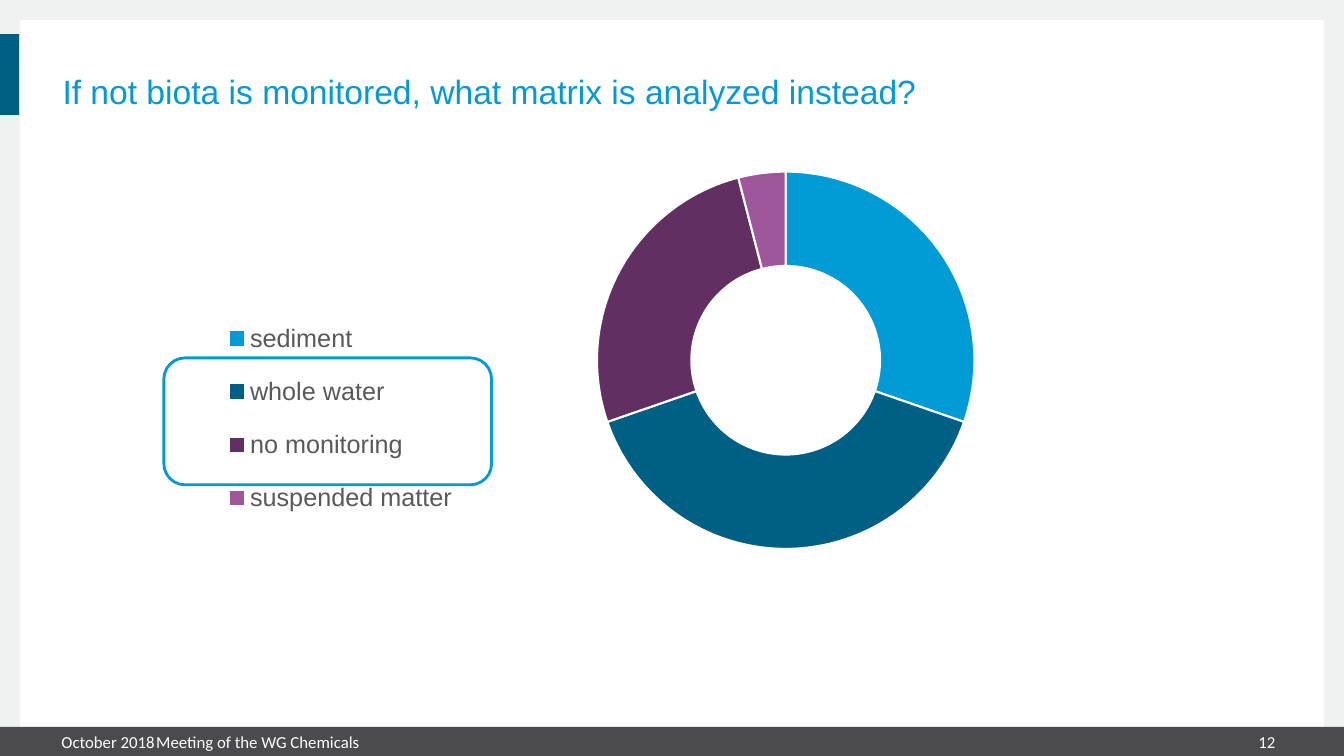
import pptx
import pptx.chart.data
import pptx.dml.color
import pptx.enum.chart
import pptx.enum.shapes
import pptx.enum.text
import pptx.oxml
import pptx.oxml.ns
import pptx.util

WIDTH, HEIGHT = 13.33, 7.5
SKY, PETROL, PLUM, ORCHID = "009BD5", "005F85", "622F63", "9D579A"
WHITE, PALE, CHARCOAL, GREY = "FFFFFF", "F0F1F1", "4B4B4D", "595959"
SHAPES = pptx.enum.shapes.MSO_SHAPE
ANCHOR = pptx.enum.text.MSO_ANCHOR
ALIGN = pptx.enum.text.PP_ALIGN
MATRICES = {
    "sediment": (30, SKY),
    "whole water": (39, PETROL),
    "no monitoring": (26, PLUM),
    "suspended matter": (4, ORCHID),
}


def color(hex_value):
    return pptx.dml.color.RGBColor.from_string(hex_value)


def inches(box):
    return [pptx.util.Inches(length) for length in box]


def set_font(font, name, size, hex_value):
    for key, value in {"name": name, "size": pptx.util.Pt(size), "bold": False}.items():
        setattr(font, key, value)
    font.color.rgb = color(hex_value)


def write(holder, text, font, anchor, align=ALIGN.LEFT):
    frame = holder.text_frame
    settings = {"margin_left": 0, "margin_top": 0, "margin_right": 0, "margin_bottom": 0,
                "word_wrap": True, "vertical_anchor": anchor,
                "auto_size": pptx.enum.text.MSO_AUTO_SIZE.NONE}
    for key, value in settings.items():
        setattr(frame, key, value)
    line = frame.paragraphs[0]
    line.alignment = align
    run = line.add_run()
    run.text = text
    set_font(run.font, *font)
    return line


def add_block(slide, box, fill=None, outline=None, kind=SHAPES.RECTANGLE):
    block = slide.shapes.add_shape(kind, *inches(box))
    block.shadow.inherit = False
    if fill:
        block.fill.solid()
        block.fill.fore_color.rgb = color(fill)
    else:
        block.fill.background()
    if outline:
        block.line.color.rgb = color(outline)
        block.line.width = pptx.util.Pt(2)
    else:
        block.line.fill.background()


def add_backdrop(slide, box):
    left, top, width, height = box
    add_block(slide, box, PALE)
    add_block(slide, (left + 0.2, top + 0.2, width - 0.4, height - 0.32), WHITE)
    add_block(slide, (left, top + 0.34, 0.19, 0.8), PETROL)


def add_title(slide, box):
    title = slide.shapes.title
    for key, value in zip(("left", "top", "width", "height"), inches(box)):
        setattr(title, key, value)
    line = write(title, "If not biota is monitored, what matrix is analyzed instead?",
                 ("Arial", 24, SKY), ANCHOR.BOTTOM)
    line.line_spacing = pptx.util.Pt(22)


def layout_xml(shares, inner=False):
    """Manual chart layout, given as shares of the chart's size."""
    target = '<c:layoutTarget val="inner"/>' if inner else ""
    modes = '<c:xMode val="edge"/><c:yMode val="edge"/>'
    sizes = "".join(f'<c:{key} val="{share}"/>' for key, share in zip("xywh", shares))
    return pptx.oxml.parse_xml(
        f'<c:layout {pptx.oxml.ns.nsdecls("c")}><c:manualLayout>'
        f"{target}{modes}{sizes}</c:manualLayout></c:layout>")


def add_matrix_chart(slide, box):
    left, top, width, height = box
    data = pptx.chart.data.CategoryChartData()
    data.categories = list(MATRICES)
    data.add_series("Series 1", [share for share, _ in MATRICES.values()])
    chart = slide.shapes.add_chart(
        pptx.enum.chart.XL_CHART_TYPE.DOUGHNUT, *inches(box), data).chart
    chart.has_title = False
    set_font(chart.font, "Cambria", 10, "000000")

    # Ring segments
    plot = chart.plots[0]
    plot.vary_by_categories = True
    plot.has_data_labels = False
    for index, (_, fill) in enumerate(MATRICES.values()):
        segment = plot.series[0].points[index].format
        segment.fill.solid()
        segment.fill.fore_color.rgb = color(fill)
        segment.line.color.rgb = color(WHITE)
        segment.line.width = pptx.util.Pt(1.5)
    area = chart.element.find(".//" + pptx.oxml.ns.qn("c:plotArea"))
    for old in area.findall(pptx.oxml.ns.qn("c:layout")):
        area.remove(old)
    area.insert(0, layout_xml((0.427, 0.121, 0.553, 0.764), inner=True))

    # Legend to the left of the ring, tall enough to clear the frame
    chart.has_legend = True
    legend = chart.legend
    legend.position = pptx.enum.chart.XL_LEGEND_POSITION.BOTTOM
    legend.include_in_layout = False
    set_font(legend.font, "Arial", 18, GREY)
    key = chart.element.find(".//" + pptx.oxml.ns.qn("c:legend"))
    for old in key.findall(pptx.oxml.ns.qn("c:layout")):
        key.remove(old)
    key.find(pptx.oxml.ns.qn("c:legendPos")).addnext(layout_xml((0.09, 0.38, 0.26, 0.48)))

    # Frame around the highlighted legend entries
    add_block(slide, (left + 0.028 * width, top + 0.498 * height, 0.356 * width, 0.257 * height),
              outline=SKY, kind=SHAPES.ROUNDED_RECTANGLE)


def add_footer(slide, box):
    left, top, width, height = box
    add_block(slide, box, CHARCOAL)
    entries = [
        ("October 2018", 0.61, 0.94, ALIGN.LEFT),
        ("Meeting of the WG Chemicals", 1.55, 9.8, ALIGN.LEFT),
        ("12", 11.84, 0.81, ALIGN.RIGHT),
    ]
    for text, offset, length, align in entries:
        entry = slide.shapes.add_textbox(*inches((left + offset, top, length, height)))
        write(entry, text, ("Calibri", 12, WHITE), ANCHOR.MIDDLE, align)


def main():
    deck = pptx.Presentation()
    deck.slide_width, deck.slide_height = inches((WIDTH, HEIGHT))
    slide = deck.slides.add_slide(deck.slide_layouts[5])
    add_backdrop(slide, (0, 0, WIDTH, HEIGHT))
    # The title comes after the backdrop so that it stays in front
    slide.shapes.title.element.getparent().append(slide.shapes.title.element)
    add_title(slide, (0.62, 0.44, 12, 0.66))
    add_matrix_chart(slide, (1.37, 1.11, 9.13, 4.9))
    add_footer(slide, (0, 7.21, WIDTH, 0.29))
    deck.save("out.pptx")


if __name__ == "__main__":
    main()
